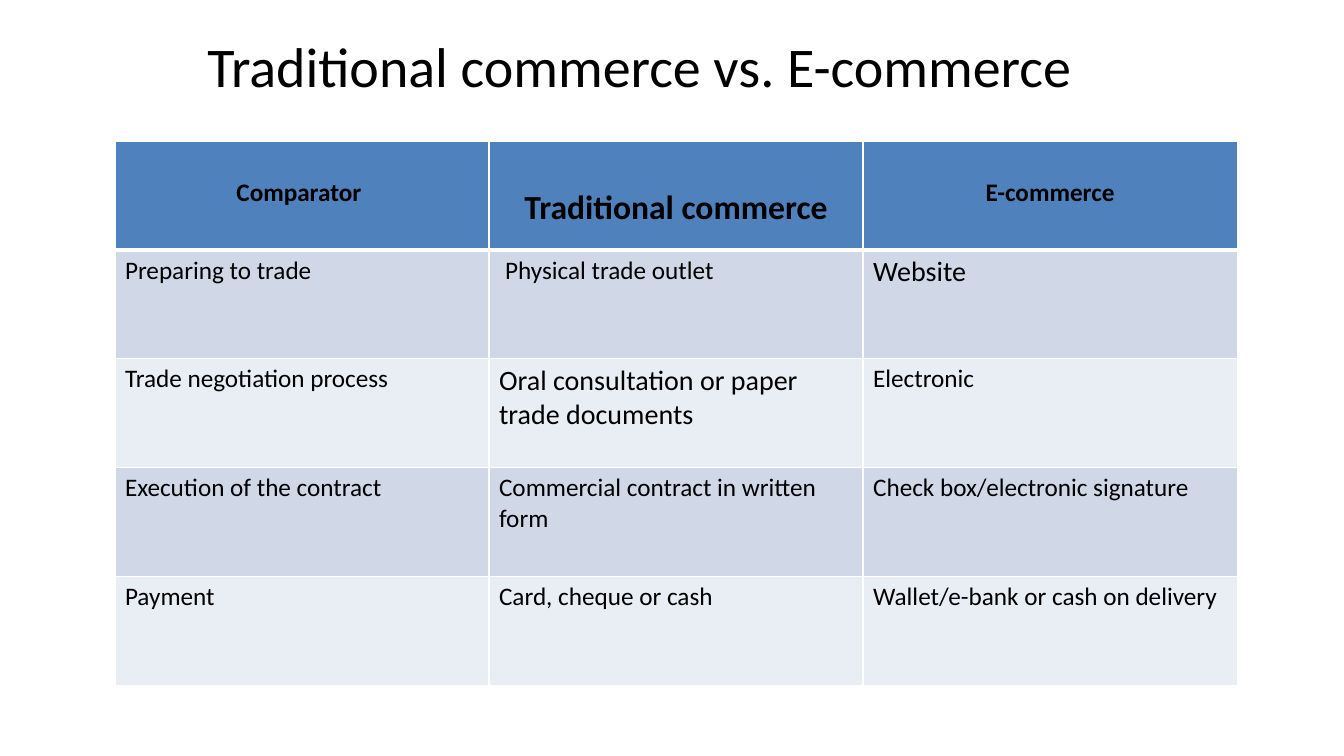
import pptx
import pptx.dml.color
import pptx.enum.text
import pptx.oxml
import pptx.oxml.ns
import pptx.util

PX = 9144
FONT = "Calibri"
ALIGN = pptx.enum.text.PP_ALIGN
ANCHOR = pptx.enum.text.MSO_ANCHOR
HEADER_FILL = "4F81BD"
BAND_FILLS = ["D0D8E8", "E9EDF4"]

COMPARISON = [
    ["Comparator", "Traditional commerce", "E-commerce"],
    ["Preparing to trade", "Physical trade outlet", "Website"],
    ["Trade negotiation process", "Oral consultation or paper trade documents", "Electronic"],
    ["Execution of the contract", "Commercial contract in written form", "Check box/electronic signature"],
    ["Payment", "Card, cheque or cash", "Wallet/e-bank or cash on delivery"],
]
SIZES = {(0, 1): 24, (1, 2): 20, (2, 1): 20}
MARGINS = {
    (0, 0): {"margin_top": 36, "margin_right": 16},
    (0, 1): {"margin_top": 46},
    (0, 2): {"margin_top": 36},
    (1, 1): {"margin_left": 16},
}


def px(length):
    return pptx.util.Emu(length * PX)


def colour(value):
    return pptx.dml.color.RGBColor.from_string(value)


def set_all(target, values):
    for name, value in values.items():
        setattr(target, name, value)


def write(frame, text, size, bold, align):
    frame.text = text
    paragraph = frame.paragraphs[0]
    paragraph.alignment = align
    font = paragraph.runs[0].font
    set_all(font, {"name": FONT, "size": pptx.util.Pt(size), "bold": bold})
    font.color.rgb = colour("000000")


def add_borders(cell, widths):
    properties = cell._tc.get_or_add_tcPr()
    for side, width in widths.items():
        properties.append(pptx.oxml.parse_xml(
            f'<a:ln{side} {pptx.oxml.ns.nsdecls("a")} w="{pptx.util.Pt(width)}">'
            '<a:solidFill><a:srgbClr val="FFFFFF"/></a:solidFill>'
            f'</a:ln{side}>'))


def place_title(slide, left, top, width, height):
    title = slide.shapes.title
    set_all(title, {"left": px(left), "top": px(top), "width": px(width), "height": px(height)})
    set_all(title.text_frame, {
        "word_wrap": True,
        "auto_size": pptx.enum.text.MSO_AUTO_SIZE.NONE,
        "vertical_anchor": ANCHOR.TOP,
    })
    write(title.text_frame, "Traditional commerce vs. E-commerce", 40, False, ALIGN.CENTER)


def place_comparison(slide, left, top, width, height):
    rows, columns = len(COMPARISON), len(COMPARISON[0])
    table = slide.shapes.add_table(
        rows, columns, px(left), px(top), px(width), px(height)).table
    for column in table.columns:
        column.width = px(width // columns)
    for row in table.rows:
        row.height = px(height // rows)
    for r, entries in enumerate(COMPARISON):
        header = r == 0
        for c, entry in enumerate(entries):
            cell = table.cell(r, c)
            add_borders(cell, {"L": 1, "R": 1, "T": 3 if r == 1 else 1, "B": 3 if header else 1})
            cell.fill.solid()
            cell.fill.fore_color.rgb = colour(HEADER_FILL if header else BAND_FILLS[(r - 1) % 2])
            margins = MARGINS.get((r, c), {})
            set_all(cell, {name: px(length) for name, length in margins.items()})
            write(cell.text_frame, entry, SIZES.get((r, c), 18), header,
                  ALIGN.CENTER if header else ALIGN.LEFT)


def main():
    deck = pptx.Presentation()
    set_all(deck, {"slide_width": px(1333), "slide_height": px(750)})
    slide = deck.slides.add_slide(deck.slide_layouts[5])
    place_title(slide, 182, 26, 904, 77)
    place_comparison(slide, 114, 140, 1113, 540)
    deck.save("out.pptx")


if __name__ == "__main__":
    main()
